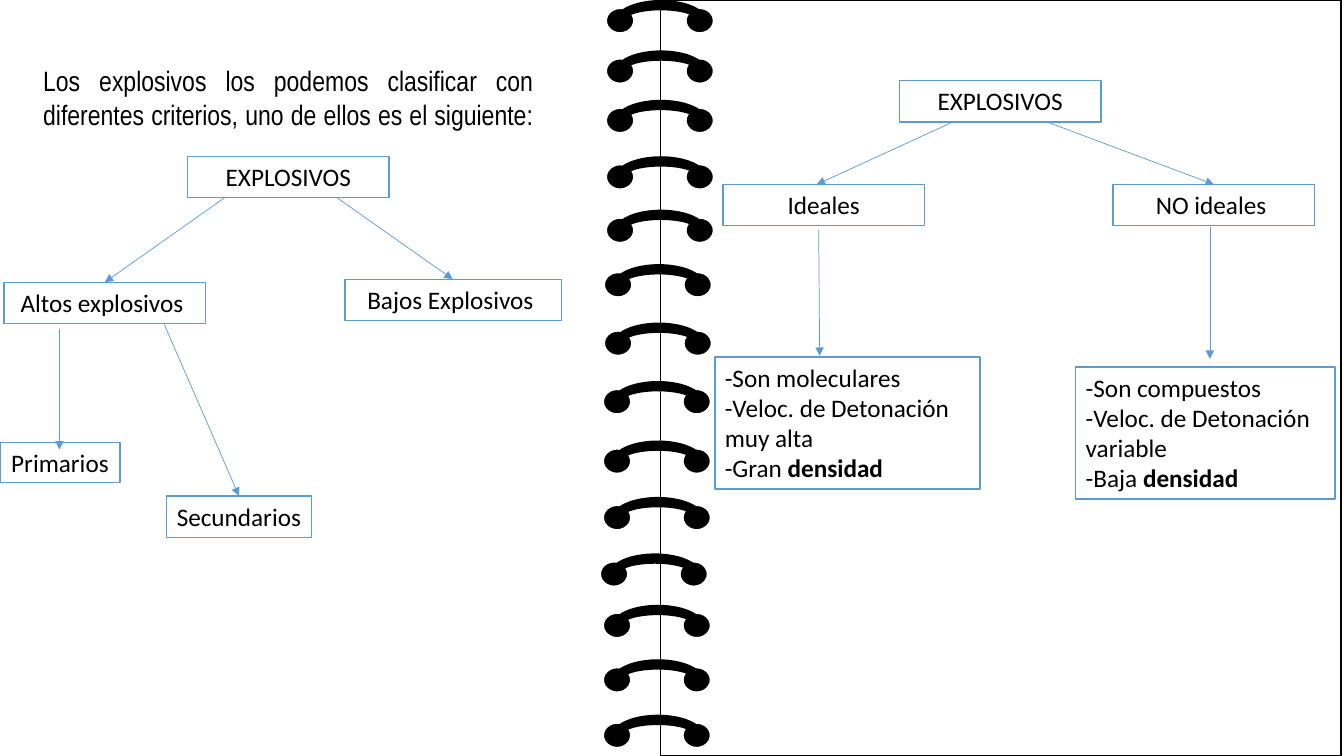
from lxml.etree import SubElement
from pptx import Presentation
from pptx.dml.color import RGBColor
from pptx.enum.shapes import MSO_CONNECTOR, MSO_SHAPE
from pptx.enum.text import MSO_ANCHOR, PP_ALIGN
from pptx.oxml.ns import qn
from pptx.util import Inches, Pt

COLORS = {"ink": "000000", "paper": "FFFFFF", "accent": "5B9BD5"}
RINGS = [(6.1, 0), (6.1, 0.5), (6.1, 0.99), (6.1, 1.55), (6.1, 2.08),
         (6.08, 2.62), (6.08, 3.2), (6.07, 3.78), (6.07, 4.37), (6.07, 4.93),
         (6.04, 5.49), (6.07, 6), (6.07, 6.54), (6.07, 7.09)]


def rgb(name):
    return RGBColor.from_string(COLORS[name])


def add_block(s, kind, x, y, w, h, fill, line=None, weight=1):
    sp = s.shapes.add_shape(kind, Inches(x), Inches(y), Inches(w), Inches(h))
    sp.shadow.inherit = False
    sp.fill.solid()
    sp.fill.fore_color.rgb = rgb(fill)
    if line:
        sp.line.color.rgb = rgb(line)
        sp.line.width = Pt(weight)
    else:
        sp.line.fill.background()
    return sp


def style(p, size, font, align):
    p.alignment = align
    p.font.size = Pt(size)
    p.font.name = font
    p.font.color.rgb = rgb("ink")


def add_node(s, x, y, w, h, lines, bold_end="", align=PP_ALIGN.CENTER):
    sp = add_block(s, MSO_SHAPE.RECTANGLE, x, y, w, h, "paper", "accent")
    tf = sp.text_frame
    tf.word_wrap = len(lines) > 1
    tf.vertical_anchor = MSO_ANCHOR.TOP
    tf.text = "\n".join(lines)
    for p in tf.paragraphs:
        style(p, 18, "Calibri", align)
    if bold_end:
        r = tf.paragraphs[-1].add_run()
        r.text = bold_end
        r.font.bold = True


def add_arrow(s, x1, y1, x2, y2):
    c = s.shapes.add_connector(MSO_CONNECTOR.STRAIGHT, Inches(x1), Inches(y1),
                               Inches(x2), Inches(y2))
    c.line.color.rgb = rgb("accent")
    c.line.width = Pt(0.5)
    SubElement(c.line._get_or_add_ln(), qn("a:tailEnd"), type="triangle")
    SubElement(c._element.spPr, qn("a:effectLst"))


def add_tree(s, x, y, nodes, arrows):
    for dx, dy, w, h, label in nodes:
        add_node(s, x + dx, y + dy, w, h, [label])
    for x1, y1, x2, y2 in arrows:
        add_arrow(s, x + x1, y + y1, x + x2, y + y2)


def add_ring(s, x, y):
    for dx in (-0.09, 0.7):
        add_block(s, MSO_SHAPE.OVAL, x + dx, y + 0.08, 0.28, 0.25, "ink", "paper", 1.5)
    add_block(s, MSO_SHAPE.BLOCK_ARC, x, y, 0.91, 0.41, "ink")


def add_intro(s, x, y, w, h):
    tf = s.shapes.add_textbox(Inches(x), Inches(y), Inches(w), Inches(h)).text_frame
    tf.word_wrap = True
    tf.text = ("Los explosivos los podemos clasificar con diferentes criterios, "
               "uno de ellos es el siguiente: ")
    style(tf.paragraphs[0], 20, "Arial Narrow", PP_ALIGN.JUSTIFY)


def add_left_page(s, x, y):
    add_intro(s, x + 0.33, y + 0.58, 5.06, 1.11)
    nodes = [(1.86, 1.55, 2, 0.41, "EXPLOSIVOS"),
             (0.04, 2.8, 2, 0.41, "Altos explosivos "),
             (3.42, 2.77, 2.15, 0.41, "Bajos Explosivos "),
             (0, 4.39, 1.19, 0.4, "Primarios"),
             (1.65, 4.92, 1.44, 0.41, "Secundarios")]
    arrows = [(2.23, 1.96, 1.04, 2.8), (3.34, 1.96, 4.49, 2.77),
              (0.59, 3.26, 0.59, 4.46), (1.63, 3.22, 2.37, 4.92)]
    add_tree(s, x, y, nodes, arrows)


def add_right_page(s, x, y):
    nodes = [(2.37, 0.8, 2, 0.41, "EXPLOSIVOS"),
             (0.62, 1.83, 2, 0.41, "Ideales"),
             (4.49, 1.83, 2, 0.41, "NO ideales ")]
    arrows = [(2.88, 1.22, 1.55, 1.83), (3.86, 1.22, 5.49, 1.83),
              (1.57, 2.28, 1.58, 3.53), (5.45, 2.25, 5.45, 3.56)]
    traits = [(0.54, 3.54, 2.63, "moleculares", "muy alta", "Gran"),
              (4.12, 3.64, 2.57, "compuestos", "variable", "Baja")]
    for dx, dy, w, makeup, speed, density in traits:
        lines = [f"-Son {makeup}", f"-Veloc. de Detonación {speed}", f"-{density} "]
        add_node(s, x + dx, y + dy, w, 1.31, lines, "densidad", PP_ALIGN.LEFT)
    add_tree(s, x, y, nodes, arrows)


def main():
    prs = Presentation()
    prs.slide_width, prs.slide_height = Inches(13.33), Inches(7.5)
    s = prs.slides.add_slide(prs.slide_layouts[6])
    add_block(s, MSO_SHAPE.RECTANGLE, 6.55, 0, 6.75, 7.5, "paper", "ink")
    for x, y in RINGS:
        add_ring(s, x, y)
    add_left_page(s, 0, 0)
    add_right_page(s, 6.55, 0)
    prs.save("out.pptx")


if __name__ == "__main__":
    main()
